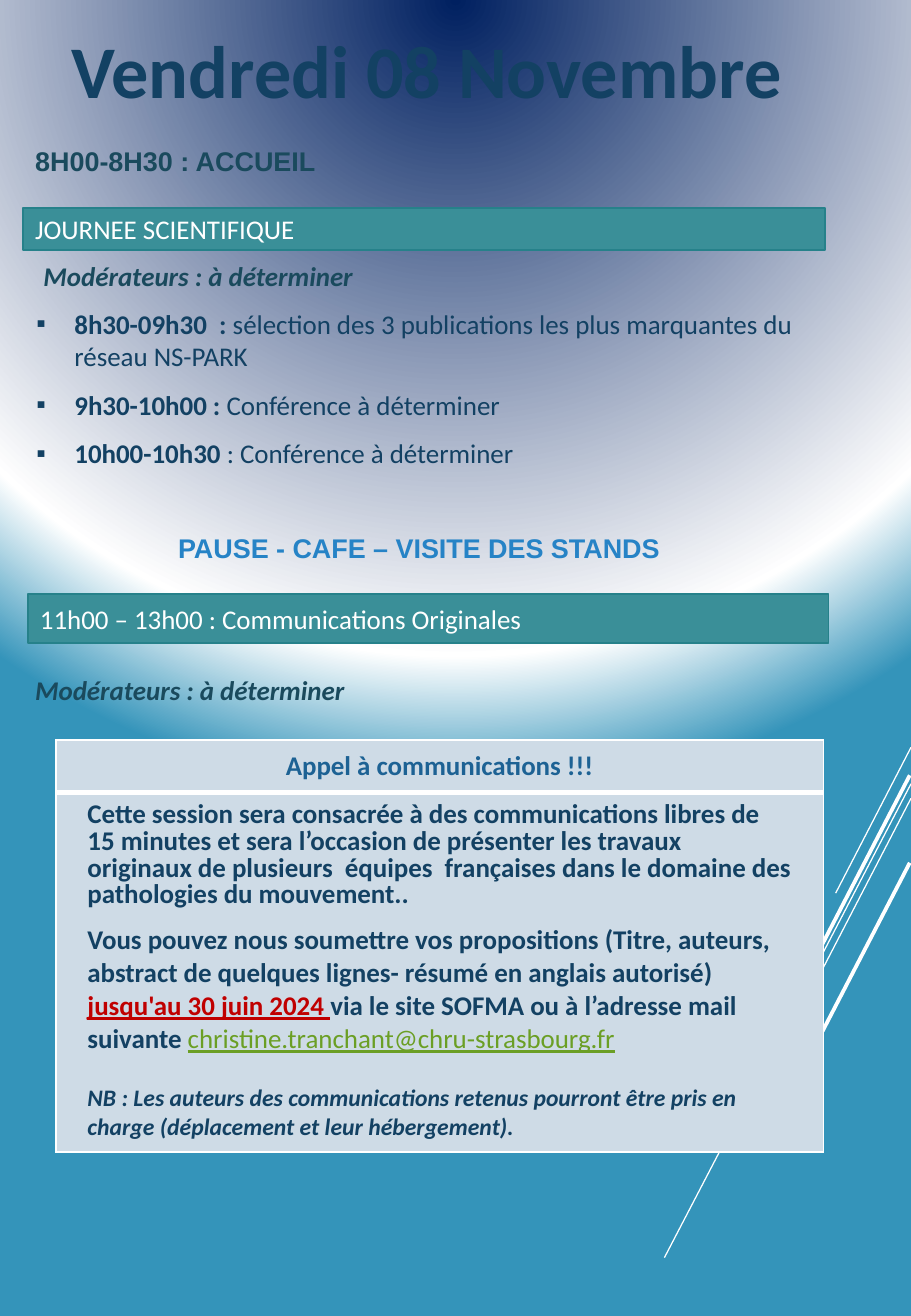
from dataclasses import dataclass
from typing import Optional

from lxml import etree
from pptx import Presentation
from pptx import util as u
from pptx.dml.color import RGBColor
from pptx.enum import shapes, text
from pptx.oxml import parse_xml
from pptx.oxml.ns import nsdecls, qn


@dataclass(frozen=True)
class Theme:
    heading_font: str = "Arial"
    body_font: str = "Calibri"
    navy: str = "134163"
    slate: str = "1A4A5D"
    blue: str = "2683C6"
    call_blue: str = "1D6294"
    red: str = "C00000"
    green: str = "6B9F25"
    white: str = "FFFFFF"
    teal: str = "3A8F98"
    teal_edge: str = "26818A"
    aqua: str = "58B6C0"
    panel: str = "CEDBE6"
    sky: str = "3494BA"
    midnight: str = "002060"
    display: float = 44
    normal: float = 16
    note: float = 14


THEME = Theme()
LEFT, CENTER = text.PP_ALIGN.LEFT, text.PP_ALIGN.CENTER


@dataclass(frozen=True)
class Box:
    left: float
    top: float
    width: float
    height: float

    def lengths(self) -> tuple:
        return tuple(map(u.Pt, (self.left, self.top, self.width, self.height)))


@dataclass(frozen=True)
class Piece:
    words: str
    bold: Optional[bool] = None
    color: Optional[str] = None
    underline: Optional[bool] = None


@dataclass(frozen=True)
class Style:
    color: str
    size: float = THEME.normal
    font: str = THEME.body_font
    bold: Optional[bool] = None
    italic: Optional[bool] = None
    align: text.PP_ALIGN = LEFT
    line_spacing: object = None
    before: float = 0
    after: float = 0
    bullet: bool = False


@dataclass(frozen=True)
class Label:
    words: str
    box: Box
    style: Style
    middle: bool = False
    wrap: bool = True


@dataclass(frozen=True)
class Ray:
    start: tuple
    end: tuple
    width: float


def rgb(value: str) -> RGBColor:
    return RGBColor.from_string(value)


def write(paragraph, style: Style, *pieces: Piece) -> None:
    paragraph.alignment = style.align
    paragraph.line_spacing = style.line_spacing
    paragraph.space_before, paragraph.space_after = u.Pt(style.before), u.Pt(style.after)
    if style.bullet:
        properties = paragraph._p.get_or_add_pPr()
        properties.set("marL", str(u.Pt(22.5)))
        properties.set("indent", str(u.Pt(-22.5)))
        etree.SubElement(properties, qn("a:buFont")).set("typeface", THEME.heading_font)
        etree.SubElement(properties, qn("a:buChar")).set("char", "▪")
    font = paragraph.font
    font.name, font.size = style.font, u.Pt(style.size)
    font.bold, font.italic = style.bold, style.italic
    font.color.rgb = rgb(style.color)
    for piece in pieces:
        run = paragraph.add_run()
        run.text = piece.words
        if piece.bold is not None:
            run.font.bold = piece.bold
        if piece.underline:
            run.font.underline = True
        if piece.color:
            run.font.color.rgb = rgb(piece.color)


def write_all(frame, *entries: tuple) -> None:
    for index, (style, *pieces) in enumerate(entries):
        paragraph = frame.add_paragraph() if index else frame.paragraphs[0]
        write(paragraph, style, *pieces)


def place(shape, box: Box) -> None:
    shape.left, shape.top, shape.width, shape.height = box.lengths()


def set_background(slide) -> None:
    slide.background.fill.solid()
    properties = slide.element.find(".//" + qn("p:bgPr"))
    stops = ((0, THEME.midnight), (82000, THEME.white), (100000, THEME.sky))
    stop_xml = "".join(f'<a:gs pos="{position}"><a:srgbClr val="{color}"/></a:gs>'
                       for position, color in stops)
    properties.replace(properties[0], parse_xml(
        f'<a:gradFill {nsdecls("a")} rotWithShape="1"><a:gsLst>{stop_xml}</a:gsLst>'
        '<a:path path="circle"><a:fillToRect l="50000" t="-80000" r="50000" b="180000"/>'
        '</a:path></a:gradFill>'))


def add_ray(slide, ray: Ray) -> None:
    line = slide.shapes.add_connector(
        shapes.MSO_CONNECTOR.STRAIGHT, *map(u.Pt, ray.start + ray.end))
    line.line.color.rgb = rgb(THEME.white)
    line.line.width = u.Pt(ray.width)
    etree.SubElement(line._element.spPr, qn("a:effectLst"))


def add_label(slide, label: Label):
    shape = slide.shapes.add_textbox(*label.box.lengths())
    frame = shape.text_frame
    frame.word_wrap = label.wrap
    if label.middle:
        frame.vertical_anchor = text.MSO_ANCHOR.MIDDLE
    write_all(frame, (label.style, Piece(label.words)))
    return shape


def add_banner(slide, words: str, box: Box) -> None:
    banner = slide.shapes.add_shape(shapes.MSO_SHAPE.RECTANGLE, *box.lengths())
    banner.shadow.inherit = False
    banner.fill.solid()
    banner.fill.fore_color.rgb = rgb(THEME.teal)
    banner.line.color.rgb = rgb(THEME.teal_edge)
    banner.line.width = u.Pt(1)
    banner.text_frame.vertical_anchor = text.MSO_ANCHOR.MIDDLE
    write_all(banner.text_frame, (Style(THEME.white), Piece(words)))


def line_xml(tag: str, color: str, width: float):
    return parse_xml(f'<a:{tag} {nsdecls("a")} w="{u.Pt(width)}"><a:solidFill>'
                     f'<a:srgbClr val="{color}"/></a:solidFill></a:{tag}>')


def format_cell(cell, margin: float, top: float, bottom: float) -> None:
    cell.margin_left = cell.margin_right = u.Pt(18.75)
    cell.margin_top = cell.margin_bottom = u.Pt(margin)
    cell.fill.solid()
    cell.fill.fore_color.rgb = rgb(THEME.panel)
    properties = cell._tc.get_or_add_tcPr()
    for index, (tag, width) in enumerate((("lnL", 1), ("lnR", 1), ("lnT", top), ("lnB", bottom))):
        properties.insert(index, line_xml(tag, THEME.white, width))


def add_call(slide) -> None:
    table = slide.shapes.add_table(2, 1, *Box(33.12, 438.48, 455.04, 244).lengths()).table
    table.first_row = table.horz_banding = False
    table.rows[0].height, table.rows[1].height = u.Pt(31), u.Pt(213)
    header, body = table.cell(0, 0), table.cell(1, 0)
    format_cell(header, 5.75, 1, 3)
    format_cell(body, 7.2, 3, 1)
    header.vertical_anchor = text.MSO_ANCHOR.MIDDLE
    write_all(header.text_frame, (
        Style(THEME.call_blue, bold=True, align=CENTER, after=7.5),
        Piece("Appel à communications !!!")))
    write_all(
        body.text_frame,
        (Style(THEME.navy, bold=True, line_spacing=u.Pt(15.8), after=7.5),
         Piece("Cette session sera consacrée à des communications libres de 15 minutes\u00a0et sera "
               "l’occasion de présenter les travaux originaux de plusieurs\u00a0 équipes \u00a0françaises "
               "dans le domaine des pathologies du mouvement..")),
        (Style(THEME.navy),
         Piece("Vous pouvez nous soumettre vos propositions\u00a0(Titre, auteurs, abstract de quelques "
               "lignes- résumé en anglais autorisé) ", True),
         Piece("jusqu'au 30 juin 2024 ", True, THEME.red, True),
         Piece("via le site SOFMA ou à l’adresse mail suivante ", True),
         Piece("christine.tranchant@chru-strasbourg.fr", False, THEME.green, True)),
        (Style(THEME.navy, THEME.note, bold=True, italic=True, before=17),
         Piece("NB\u00a0: Les auteurs des communications retenus pourront être pris en charge "
               "(déplacement et leur hébergement).")))


def fill_placeholders(slide) -> None:
    title, programme = slide.shapes.title, slide.placeholders[1]
    place(title, Box(13.68, 82.8, 375.12, 25.2))
    place(programme, Box(14.4, 178.56, 478.8, 104.4))
    for shape in (title, programme):
        shape.text_frame.auto_size = text.MSO_AUTO_SIZE.NONE
    title.text_frame.vertical_anchor = text.MSO_ANCHOR.MIDDLE
    write_all(title.text_frame, (
        Style(THEME.slate, font=THEME.heading_font, bold=True), Piece("8H00-8H30 : ACCUEIL")))
    first = Style(THEME.navy, bullet=True, line_spacing=1.0)
    later = Style(THEME.navy, bullet=True, line_spacing=1.5)
    write_all(
        programme.text_frame,
        (first, Piece("8h30-09h30  : ", True),
         Piece("sélection des 3 publications les plus marquantes du réseau NS-PARK", False)),
        (later, Piece("9h30-10h00\u00a0: ", True), Piece("Conférence à déterminer", False)),
        (later, Piece("10h00-10h30 ", True), Piece(": Conférence à déterminer", False)))


def main() -> None:
    presentation = Presentation()
    presentation.slide_width, presentation.slide_height = u.Pt(540), u.Pt(779.76)
    slide = presentation.slides.add_slide(presentation.slide_layouts[1])
    set_background(slide)
    for ray in (Ray((540, 442.8), (495.36, 529.2), 0.75),
                Ray((540, 464.4), (393.84, 745.2), 0.75),
                Ray((540, 473.04), (447.12, 652.32), 0.75),
                Ray((539.28, 459.36), (454.32, 623.52), 2.25),
                Ray((539.28, 511.2), (477.36, 630.72), 2.25)):
        add_ray(slide, ray)
    fill_placeholders(slide)
    add_banner(slide, "JOURNEE SCIENTIFIQUE", Box(13.68, 123.12, 475.2, 25.2))
    add_banner(slide, "11h00 – 13h00 : Communications Originales", Box(16.56, 352.08, 474.48, 28.8))
    moderators = Style(THEME.slate, bold=True, italic=True)
    for box in (Box(18.72, 150.48, 390.96, 26.64), Box(13.68, 395.28, 425.52, 26.64)):
        add_label(slide, Label("Modérateurs : à déterminer", box, moderators))
    add_label(slide, Label(
        "PAUSE - CAFE – VISITE DES STANDS", Box(13.68, 311.76, 469.5, 25.2),
        Style(THEME.blue, font=THEME.heading_font, bold=True, align=CENTER), middle=True))
    day = add_label(slide, Label(
        "Vendredi 08 Novembre", Box(33.12, 10.8, 439.92, 60.48),
        Style(THEME.navy, THEME.display, bold=True, align=CENTER), wrap=False))
    outline = line_xml("ln", THEME.aqua, 1.75)
    day.text_frame.paragraphs[0].runs[0]._r.get_or_add_rPr().insert(0, outline)
    add_call(slide)
    presentation.save("out.pptx")


if __name__ == "__main__":
    main()
